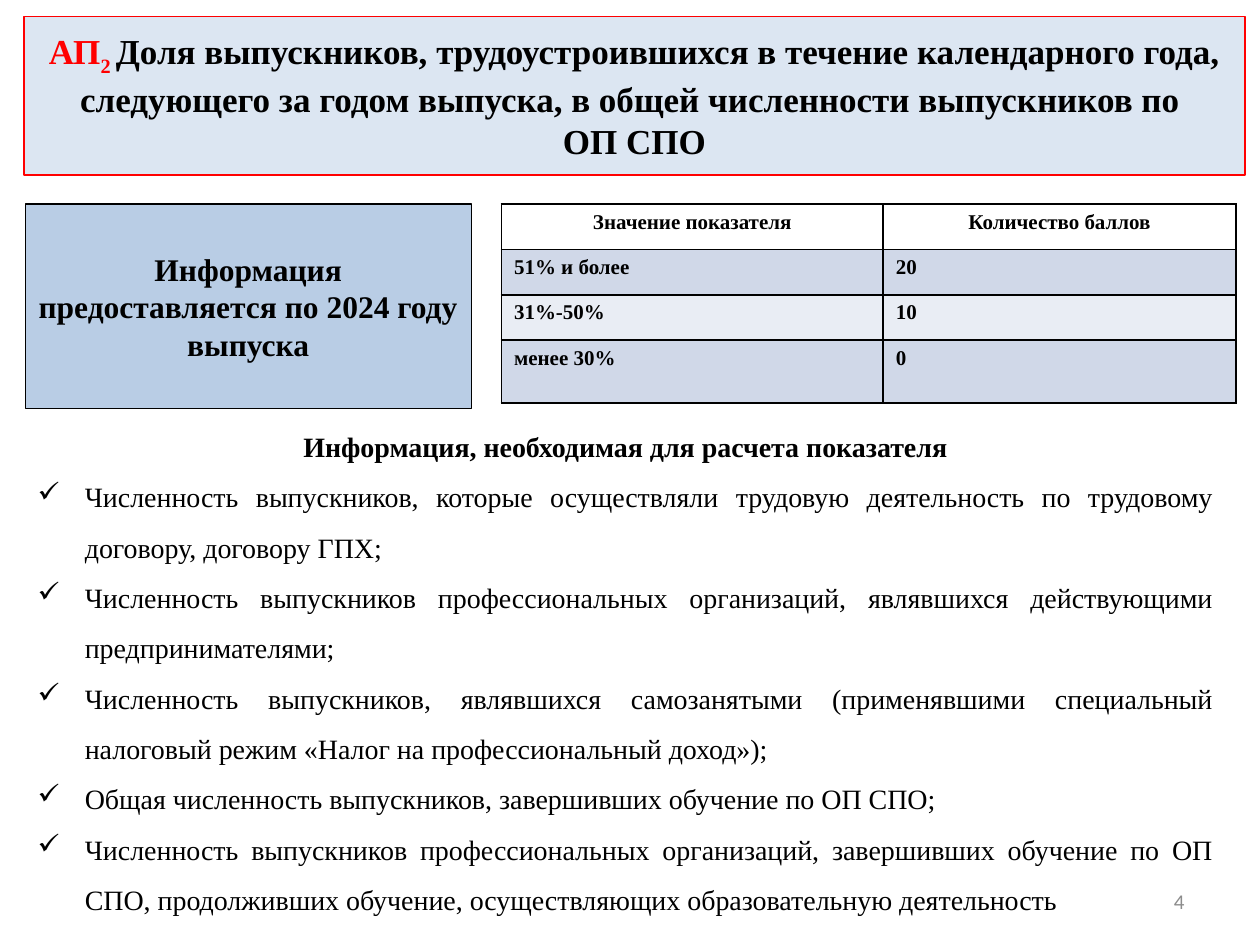
import pptx
import pptx.util
import pptx.dml.color
import pptx.enum.shapes
import pptx.enum.text
import pptx.oxml
import pptx.oxml.ns
import lxml.etree

Pt = pptx.util.Pt
Align = pptx.enum.text.PP_ALIGN
Anchor = pptx.enum.text.MSO_ANCHOR


class Theme:
    serif, sans = "Times New Roman", "Calibri"
    black, red, grey, white = "000000", "FF0000", "8C8C8C", "FFFFFF"
    pale, blue = "DCE6F2", "B9CDE5"
    bands = ["D0D8E8", "E9EDF4"]
    head, note, body, small = 20, 18, 16, 12


# Slide: a grid of 100 columns by 75 rows
deck = pptx.Presentation()
deck.slide_width, deck.slide_height = pptx.util.Inches(10), pptx.util.Inches(7.5)
unit = deck.slide_width // 100
slide = deck.slides.add_slide(deck.slide_layouts[6])


def grid(*cells):
    return [round(cell * unit) for cell in cells]


def style(part, size, color=Theme.black, bold=False, face=Theme.serif):
    font = part.font
    font.size, font.bold, font.name = Pt(size), bold, face
    font.color.rgb = pptx.dml.color.RGBColor.from_string(color)


# Title and note panels
panels = []
for place, fill, line in [
    ((1.9, 1.3, 96.9, 12.6), Theme.pale, Theme.red),
    ((2, 16.2, 35.4, 16.2), Theme.blue, Theme.black),
]:
    box = slide.shapes.add_shape(pptx.enum.shapes.MSO_SHAPE.RECTANGLE, *grid(*place))
    box.shadow.inherit = False
    box.fill.solid()
    box.fill.fore_color.rgb = pptx.dml.color.RGBColor.from_string(fill)
    box.line.color.rgb = pptx.dml.color.RGBColor.from_string(line)
    box.line.width = Pt(0.75)
    box.text_frame.word_wrap = True
    box.text_frame.vertical_anchor = Anchor.MIDDLE
    para = box.text_frame.paragraphs[0]
    para.alignment = Align.CENTER
    panels.append(para)
title, note = panels

for text, color, shift in [
    ("АП", Theme.red, 0),
    ("2 ", Theme.red, -25000),
    ("Доля выпускников, трудоустроившихся в течение календарного года, "
     "следующего за годом выпуска, в общей численности выпускников по ", Theme.black, 0),
    ("\n", Theme.black, 0),
    ("ОП СПО", Theme.black, 0),
]:
    if text == "\n":
        title.add_line_break()
        continue
    run = title.add_run()
    run.text = text
    style(run, Theme.head, color, True)
    if shift:
        run.font._element.set("baseline", str(shift))

note.text = "Информация предоставляется по 2024 году выпуска"
style(note, Theme.note, bold=True)

# Score table
scores = [
    ("Значение показателя", "Количество баллов"),
    ("51% и более", "20"),
    ("31%-50%", "10"),
    ("менее 30%", "0"),
]
table = slide.shapes.add_table(4, 2, *grid(39.8, 16.2, 58.3, 15.8)).table
for col, width in zip(table.columns, grid(30.3, 28)):
    col.width = width
for row, height in zip(table.rows, grid(3.6, 3.6, 3.6, 5)):
    row.height = height
for r, row in enumerate(scores):
    for c, text in enumerate(row):
        cell = table.cell(r, c)
        props = cell._tc.get_or_add_tcPr()
        for side in "LRTB":
            props.append(pptx.oxml.parse_xml(
                f'<a:ln{side} {pptx.oxml.ns.nsdecls("a")} w="12700"><a:solidFill>'
                f'<a:srgbClr val="{Theme.black}"/></a:solidFill></a:ln{side}>'))
        cell.fill.solid()
        shade = Theme.bands[(r - 1) % 2] if r else Theme.white
        cell.fill.fore_color.rgb = pptx.dml.color.RGBColor.from_string(shade)
        cell.text = text
        para = cell.text_frame.paragraphs[0]
        para.alignment = Align.LEFT if r else Align.CENTER
        style(para, Theme.small, bold=True)

# Heading and checklist
items = [
    "Численность выпускников, которые осуществляли трудовую деятельность "
    "по трудовому договору, договору ГПХ;",
    "Численность выпускников профессиональных организаций, являвшихся "
    "действующими предпринимателями;",
    "Численность выпускников, являвшихся самозанятыми (применявшими специальный "
    "налоговый режим «Налог на профессиональный доход»);",
    "Общая численность выпускников, завершивших обучение по ОП СПО;",
    "Численность выпускников профессиональных организаций, завершивших обучение "
    "по ОП СПО, продолживших обучение, осуществляющих образовательную деятельность",
]
frame = slide.shapes.add_textbox(*grid(2, 33.6, 95.3, 40.1)).text_frame
frame.word_wrap = True
para = frame.paragraphs[0]
para.text = "Информация, необходимая для расчета показателя"
para.alignment = Align.CENTER
style(para, Theme.body, bold=True)
[dent] = grid(3.75)
for item in items:
    para = frame.add_paragraph()
    para.text = item
    para.alignment = Align.JUSTIFY
    para.line_spacing = 1.5
    props = para._p.get_or_add_pPr()
    props.set("marL", str(dent))
    props.set("indent", str(-dent))
    mark = lxml.etree.SubElement(props, pptx.oxml.ns.qn("a:buChar"))
    mark.set("char", "✓")
    style(para, Theme.body)

# Page number
frame = slide.shapes.add_textbox(*grid(71.7, 69.5, 23.3, 4)).text_frame
frame.word_wrap = True
frame.vertical_anchor = Anchor.MIDDLE
para = frame.paragraphs[0]
para.text = "4"
para.alignment = Align.RIGHT
style(para, Theme.small, Theme.grey, face=Theme.sans)

deck.save("out.pptx")
